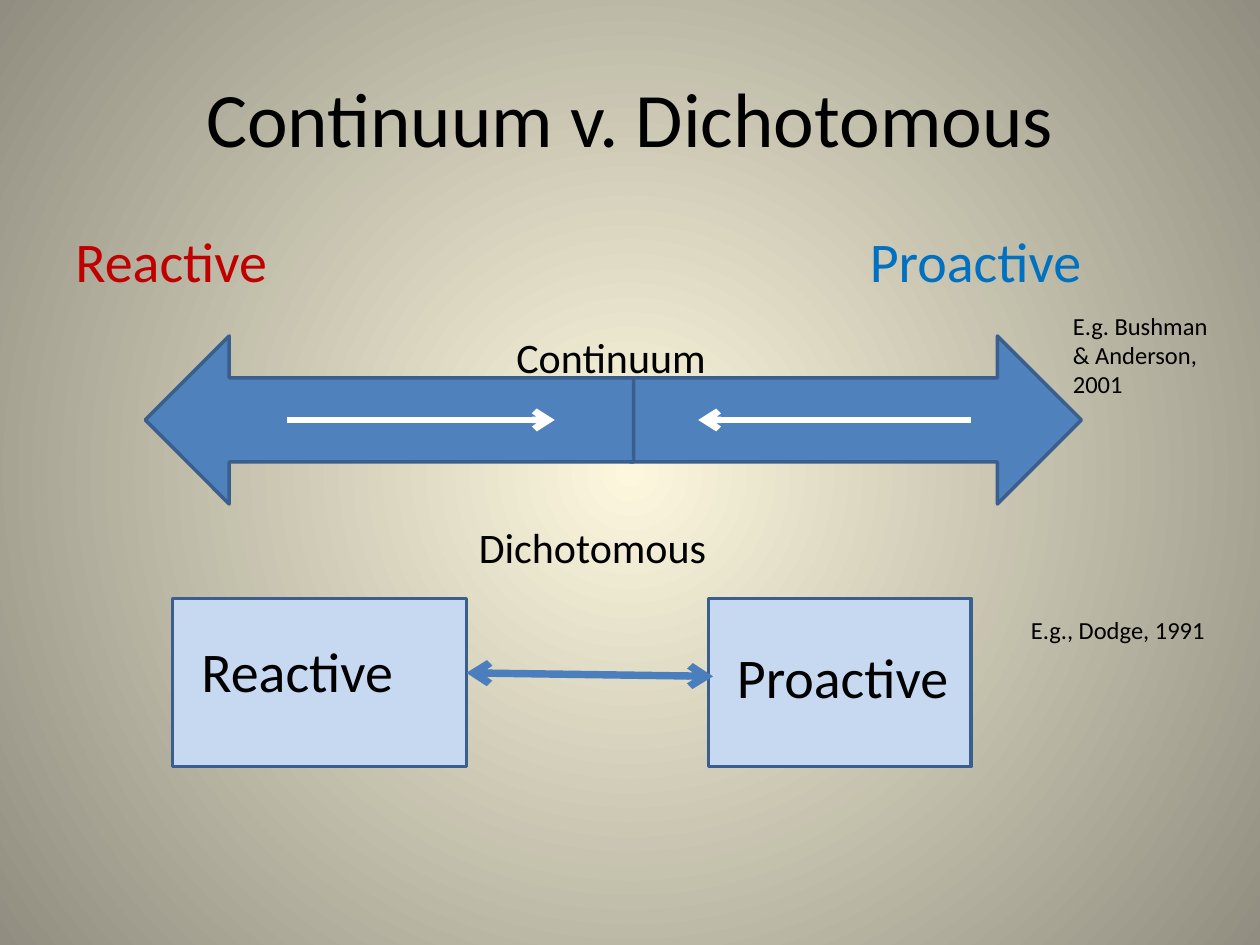
"""Build the slide contrasting a continuum with a dichotomy."""
from lxml import etree
from pptx import Presentation
from pptx.dml.color import RGBColor
from pptx.enum.shapes import MSO_CONNECTOR, MSO_SHAPE
from pptx.enum.text import MSO_ANCHOR, PP_ALIGN
from pptx.oxml.ns import qn
from pptx.util import Pt

STRAIGHT = MSO_CONNECTOR.STRAIGHT
RECTANGLE = MSO_SHAPE.RECTANGLE
LEFT_ARROW = MSO_SHAPE.LEFT_ARROW
RIGHT_ARROW = MSO_SHAPE.RIGHT_ARROW
MIDDLE = MSO_ANCHOR.MIDDLE
LEFT = PP_ALIGN.LEFT
CENTER = PP_ALIGN.CENTER

FONT = "Calibri"
BLACK = RGBColor(0x00, 0x00, 0x00)
WHITE = RGBColor(0xFF, 0xFF, 0xFF)
RED = RGBColor(0xC0, 0x00, 0x00)
BLUE = RGBColor(0x00, 0x70, 0xC0)
ARROW_BLUE = RGBColor(0x4F, 0x81, 0xBD)
LINK_BLUE = RGBColor(0x4B, 0x7E, 0xBC)
OUTLINE_BLUE = RGBColor(0x3A, 0x5F, 0x8C)
PALE_BLUE = RGBColor(0xC6, 0xD9, 0xF1)
CREAM = RGBColor(0xFC, 0xF7, 0xDD)
TAUPE = RGBColor(0x91, 0x8E, 0x81)


def write_text(text_frame, text, size=32, color=BLACK, align=LEFT):
    text_frame.word_wrap = True
    paragraph = text_frame.paragraphs[0]
    paragraph.alignment = align
    run = paragraph.add_run()
    run.text = text
    run.font.name = FONT
    run.font.size = Pt(size)
    run.font.color.rgb = color


class SlideBuilder:
    def __init__(self, slide):
        self.slide = slide

    def background(self, inner, outer):
        fill = self.slide.background.fill
        fill.gradient()
        for stop, color, position in zip(fill.gradient_stops, (inner, outer), (0, 1)):
            stop.color.rgb = color
            stop.position = position
        gradient = self.slide._element.find(".//" + qn("a:gradFill"))
        gradient.remove(gradient.find(qn("a:lin")))
        radial = etree.SubElement(gradient, qn("a:path"), {"path": "circle"})
        center = dict.fromkeys("ltrb", "50000")
        etree.SubElement(radial, qn("a:fillToRect"), center)

    def title(self, text, left, top, width, height):
        title = self.slide.shapes.title
        title.left, title.top = Pt(left), Pt(top)
        title.width, title.height = Pt(width), Pt(height)
        title.text_frame.vertical_anchor = MIDDLE
        write_text(title.text_frame, text, size=44, align=CENTER)

    def label(self, text, left, top, width, height, **style):
        box = self.slide.shapes.add_textbox(Pt(left), Pt(top), Pt(width), Pt(height))
        write_text(box.text_frame, text, **style)

    def block(self, kind, left, top, width, color):
        shape = self.slide.shapes.add_shape(kind, Pt(left), Pt(top), Pt(width), Pt(96))
        shape.shadow.inherit = False
        shape.fill.solid()
        shape.fill.fore_color.rgb = color
        shape.line.color.rgb = OUTLINE_BLUE
        shape.line.width = Pt(2)

    def arrow(self, start, end, color, weight, ends=("tailEnd",)):
        points = [Pt(value) for value in (*start, *end)]
        connector = self.slide.shapes.add_connector(STRAIGHT, *points)
        connector.line.color.rgb = color
        connector.line.width = Pt(weight)
        line = connector.line._get_or_add_ln()
        for end_name in ends:
            etree.SubElement(line, qn("a:" + end_name), {"type": "arrow"})
        etree.SubElement(connector._element.spPr, qn("a:effectLst"))


def main():
    presentation = Presentation()
    presentation.slide_width, presentation.slide_height = Pt(720), Pt(540)
    slide = presentation.slides.add_slide(presentation.slide_layouts[5])
    builder = SlideBuilder(slide)
    builder.background(CREAM, TAUPE)
    builder.title("Continuum v. Dichotomous", 36, 21.6, 648, 90)

    builder.label("Reactive", 36, 126, 140, 46, color=RED)
    builder.label("Proactive", 490, 126, 150, 46, color=BLUE)

    builder.block(RIGHT_ARROW, 360, 192, 258, ARROW_BLUE)
    builder.block(LEFT_ARROW, 83, 192, 279, ARROW_BLUE)
    builder.arrow((164, 240), (317, 240), WHITE, 3.75)
    builder.arrow((555, 240), (399, 240), WHITE, 3.75)
    builder.label("Continuum", 288, 186, 130, 36, size=24)
    builder.label("E.g. Bushman & Anderson, 2001", 606, 174, 102, 58, size=14)

    builder.block(RECTANGLE, 98.5, 342, 168, PALE_BLUE)
    builder.block(RECTANGLE, 405, 342, 150, PALE_BLUE)
    builder.label("Reactive", 108, 360, 126, 46)
    builder.label("Proactive", 414, 363.5, 141, 46)
    builder.arrow((266.5, 384.5), (407.5, 386.5), LINK_BLUE, 4.25,
                  ends=("headEnd", "tailEnd"))
    builder.label("Dichotomous", 266.5, 294.5, 152, 36, size=24)
    builder.label("E.g., Dodge, 1991", 582, 348, 120, 24, size=14)

    presentation.save("out.pptx")


if __name__ == "__main__":
    main()
